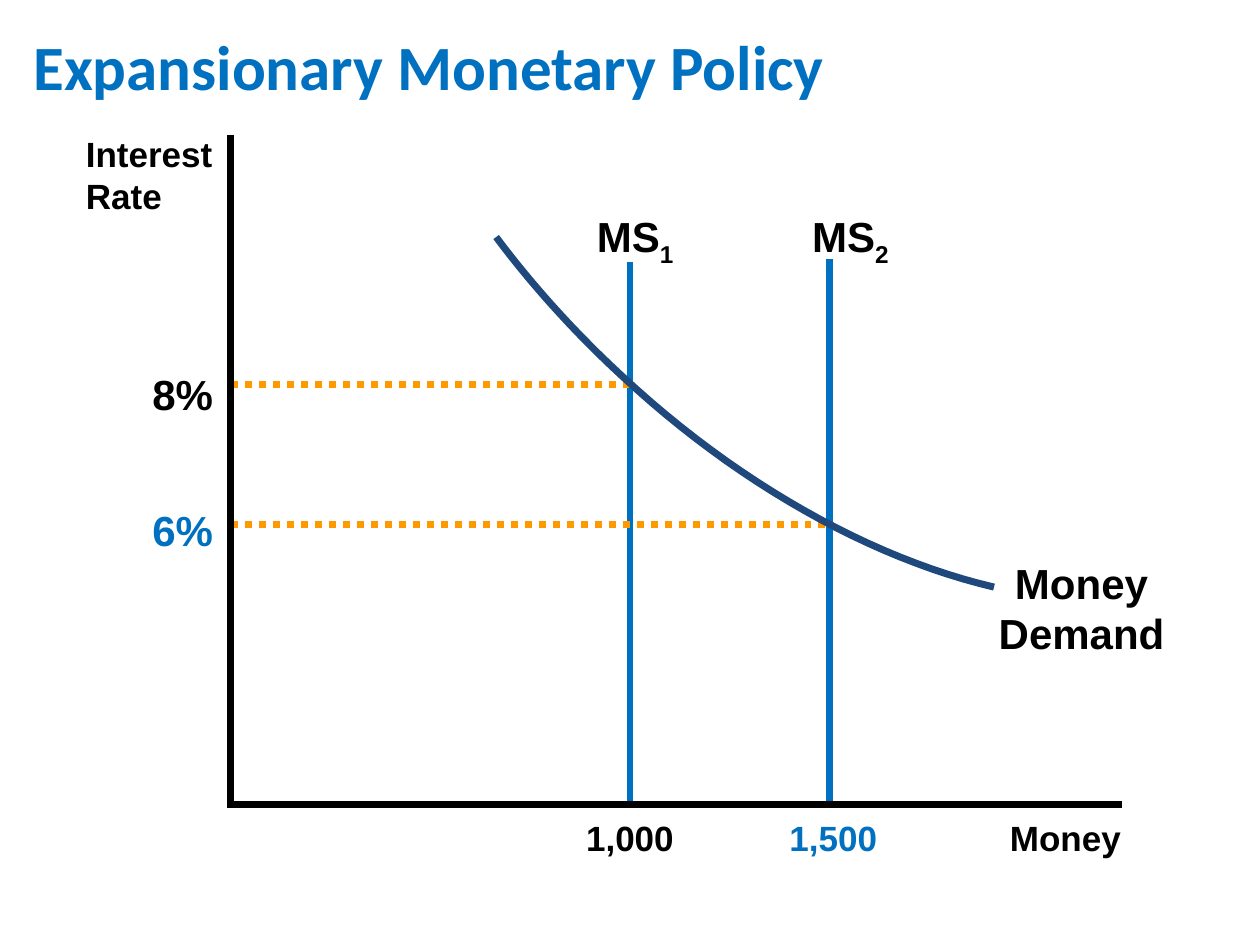
import pptx
import pptx.dml.color
import pptx.enum.dml
import pptx.enum.shapes
import pptx.enum.text
import pptx.oxml.ns
import pptx.util
from lxml import etree

Pt = pptx.util.Pt
RGBColor = pptx.dml.color.RGBColor
Align = pptx.enum.text.PP_ALIGN
Dash = pptx.enum.dml.MSO_LINE

BLACK = RGBColor(0x00, 0x00, 0x00)
WHITE = RGBColor(0xFF, 0xFF, 0xFF)
BLUE = RGBColor(0x00, 0x70, 0xC0)
NAVY = RGBColor(0x1F, 0x49, 0x7D)
ORANGE = RGBColor(0xFF, 0x99, 0x00)

TITLE = {"name": "Calibri", "size": Pt(36), "bold": True}
LARGE = {"name": "Arial", "size": Pt(24), "bold": True}
SMALL = {"name": "Arial", "size": Pt(20), "bold": True}

AXIS_X, AXIS_Y = 132, 460
AXIS_TOP, AXIS_RIGHT = 77, 641
SUPPLY_1, SUPPLY_2 = 360, 474
RATE_8, RATE_6 = 219.5, 300
DEMAND_CURVES = [
    [(568, 335.5), (497.5, 319), (421, 276), (355, 214.5)],
    [(355, 214.5), (328.5, 190), (304.5, 163.5), (283.5, 135.5)],
]


def bezier_points(controls, steps=24):
    """Return evenly stepped points along a cubic Bezier curve."""
    points = []
    for step in range(steps + 1):
        t = step / steps
        weights = ((1 - t) ** 3, 3 * t * (1 - t) ** 2, 3 * t * t * (1 - t), t ** 3)
        points.append(tuple(sum(weight * control[axis] for weight, control in zip(weights, controls))
                            for axis in (0, 1)))
    return points


class Diagram:
    """Holds the current slide and the shared line style."""

    line_width = Pt(4)

    def __init__(self, slide):
        self.slide = slide

    def text(self, box, wording, style, color=BLACK, align=Align.LEFT, subscript=None, fill=None):
        shape = self.slide.shapes.add_textbox(*map(Pt, box))
        shape.text_frame.word_wrap = True
        if fill is not None:
            shape.fill.solid()
            shape.fill.fore_color.rgb = fill
        paragraph = shape.text_frame.paragraphs[0]
        paragraph.alignment = align
        for part in filter(None, (wording, subscript)):
            run = paragraph.add_run()
            run.text = part
            for attribute, value in style.items():
                setattr(run.font, attribute, value)
            run.font.color.rgb = color
            if part is subscript:
                run._r.get_or_add_rPr().set("baseline", "-25000")

    def line(self, start, end, color, dash=None):
        connector = self.slide.shapes.add_connector(
            pptx.enum.shapes.MSO_CONNECTOR.STRAIGHT, *map(Pt, start + end))
        self.style_line(connector.line, color, dash)
        etree.SubElement(connector._element.spPr, pptx.oxml.ns.qn("a:effectLst"))

    def curve(self, segments, color):
        points = [(Pt(x), Pt(y)) for segment in segments for x, y in bezier_points(segment)]
        builder = self.slide.shapes.build_freeform(*points[0])
        builder.add_line_segments(points[1:], close=False)
        shape = builder.convert_to_shape()
        shape.shadow.inherit = False
        shape.fill.background()
        self.style_line(shape.line, color)

    def style_line(self, line, color, dash=None):
        line.color.rgb = color
        for attribute, value in {"width": self.line_width, "dash_style": dash}.items():
            setattr(line, attribute, value)


def main():
    presentation = pptx.Presentation()
    presentation.slide_width, presentation.slide_height = Pt(720), Pt(540)
    diagram = Diagram(presentation.slides.add_slide(presentation.slide_layouts[6]))

    diagram.text((12, 12, 570, 51), "Expansionary Monetary Policy", TITLE, BLUE, fill=WHITE)

    for x, top, label_left, label_width, number in (
            (SUPPLY_1, 150, 312, 102, "1"), (SUPPLY_2, 148, 432, 108, "2")):
        diagram.line((x, top), (x, AXIS_Y), BLUE)
        diagram.text((label_left, 117, label_width, 34), "MS", LARGE,
                     align=Align.CENTER, subscript=number)

    for rate, y, label_top, supply, color in (
            ("8%", RATE_8, 207, SUPPLY_1, BLACK), ("6%", RATE_6, 284.5, SUPPLY_2, BLUE)):
        diagram.text((80, label_top, 64, 34), rate, LARGE, color)
        diagram.line((AXIS_X, y), (supply, y), ORANGE, Dash.ROUND_DOT)

    diagram.line((AXIS_X, AXIS_Y), (AXIS_RIGHT, AXIS_Y), BLACK)
    diagram.line((AXIS_X, AXIS_TOP), (AXIS_X, AXIS_Y + 2), BLACK)

    diagram.text((306, 463, 108, 29), "1,000", SMALL, align=Align.CENTER)
    diagram.text((444, 463, 84, 29), "1,500", SMALL, BLUE)
    diagram.text((570, 463, 84, 29), "Money", SMALL)
    diagram.text((42, 72, 91, 51), "Interest Rate", SMALL)
    diagram.text((558, 315, 120, 60), "Money Demand", LARGE, align=Align.CENTER)
    diagram.curve(DEMAND_CURVES, NAVY)

    presentation.save("out.pptx")


if __name__ == "__main__":
    main()
